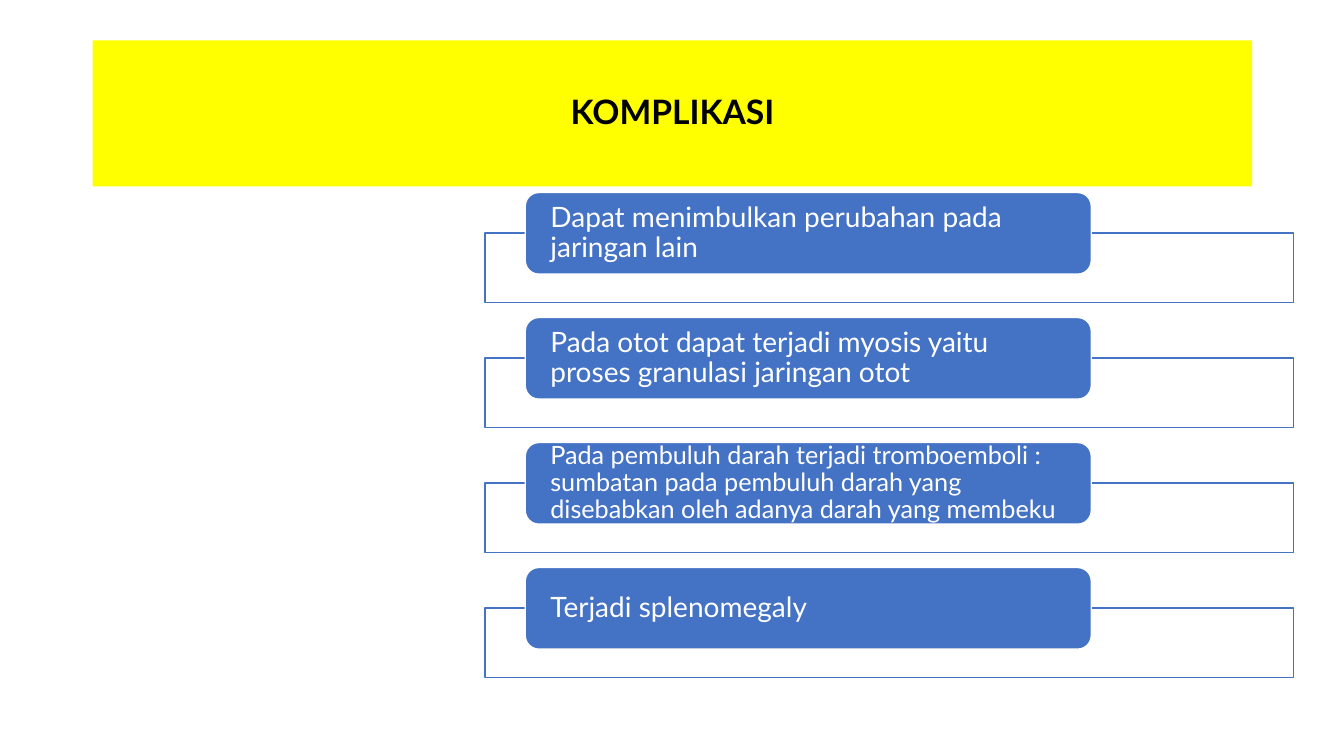
from dataclasses import dataclass

from pptx import Presentation
from pptx.dml.color import RGBColor
from pptx.enum.shapes import MSO_SHAPE
from pptx.enum.text import MSO_ANCHOR, PP_ALIGN
from pptx.util import Inches, Pt

TITLE = "KOMPLIKASI"
COMPLICATIONS = [
    ("Dapat menimbulkan perubahan pada jaringan lain", "body"),
    ("Pada otot dapat terjadi myosis yaitu proses granulasi jaringan otot", "body"),
    ("Pada pembuluh darah terjadi tromboemboli : sumbatan pada pembuluh darah "
     "yang disebabkan oleh adanya darah yang membeku", "dense"),
    ("Terjadi splenomegaly", "body"),
]


@dataclass(frozen=True)
class Theme:
    font: str = "Lato"
    yellow: str = "FFFF00"
    blue: str = "4472C4"
    white: str = "FFFFFF"
    black: str = "000000"
    title: int = 24
    body: int = 20
    dense: int = 18


THEME = Theme()
SLIDE_W, SLIDE_H = 13.33, 7.5
BANNER = (0.92, 0.4, 11.5, 1.45)
FRAME_LEFT, FRAME_W, FRAME_H = 4.81, 8.02, 0.69
LABEL_TOP, LABEL_H = 1.91, 0.81
LABEL_INDENT, LABEL_SHARE = 0.4, 0.7
FRAME_DROP = 0.4
ROW_PITCH = 1.24
LABEL_MARGIN = 0.21


def add_box(slide, preset, bounds, fill, outline=None):
    box = slide.shapes.add_shape(preset, *map(Inches, bounds))
    box.shadow.inherit = False
    box.fill.solid()
    box.fill.fore_color.rgb = RGBColor.from_string(fill)
    if outline:
        box.line.color.rgb = RGBColor.from_string(outline)
        box.line.width = Pt(1)
    else:
        box.line.fill.background()
    return box


def write(box, wording, size, color, align, margin, bold=False):
    frame = box.text_frame
    frame_format = {
        "word_wrap": True, "vertical_anchor": MSO_ANCHOR.MIDDLE,
        "margin_left": Inches(margin), "margin_right": Inches(margin),
        "margin_top": 0, "margin_bottom": 0,
    }
    for name, value in frame_format.items():
        setattr(frame, name, value)
    paragraph = frame.paragraphs[0]
    paragraph.alignment = align
    paragraph.line_spacing = 0.9
    run = paragraph.add_run()
    run.text = wording
    for name, value in {"name": THEME.font, "size": Pt(size), "bold": bold}.items():
        setattr(run.font, name, value)
    run.font.color.rgb = RGBColor.from_string(color)


def main():
    deck = Presentation()
    deck.slide_width, deck.slide_height = Inches(SLIDE_W), Inches(SLIDE_H)
    slide = deck.slides.add_slide(deck.slide_layouts[6])

    banner = add_box(slide, MSO_SHAPE.RECTANGLE, BANNER, THEME.yellow)
    write(banner, TITLE, THEME.title, THEME.black, PP_ALIGN.CENTER, 0.1, bold=True)

    for row, (complication, size) in enumerate(COMPLICATIONS):
        top = LABEL_TOP + row * ROW_PITCH
        add_box(slide, MSO_SHAPE.RECTANGLE,
                (FRAME_LEFT, top + FRAME_DROP, FRAME_W, FRAME_H),
                THEME.white, THEME.blue)
        label = add_box(slide, MSO_SHAPE.ROUNDED_RECTANGLE,
                        (FRAME_LEFT + LABEL_INDENT, top, FRAME_W * LABEL_SHARE, LABEL_H),
                        THEME.blue, THEME.white)
        write(label, complication, getattr(THEME, size), THEME.white,
              PP_ALIGN.LEFT, LABEL_MARGIN)

    deck.save("out.pptx")


if __name__ == "__main__":
    main()
